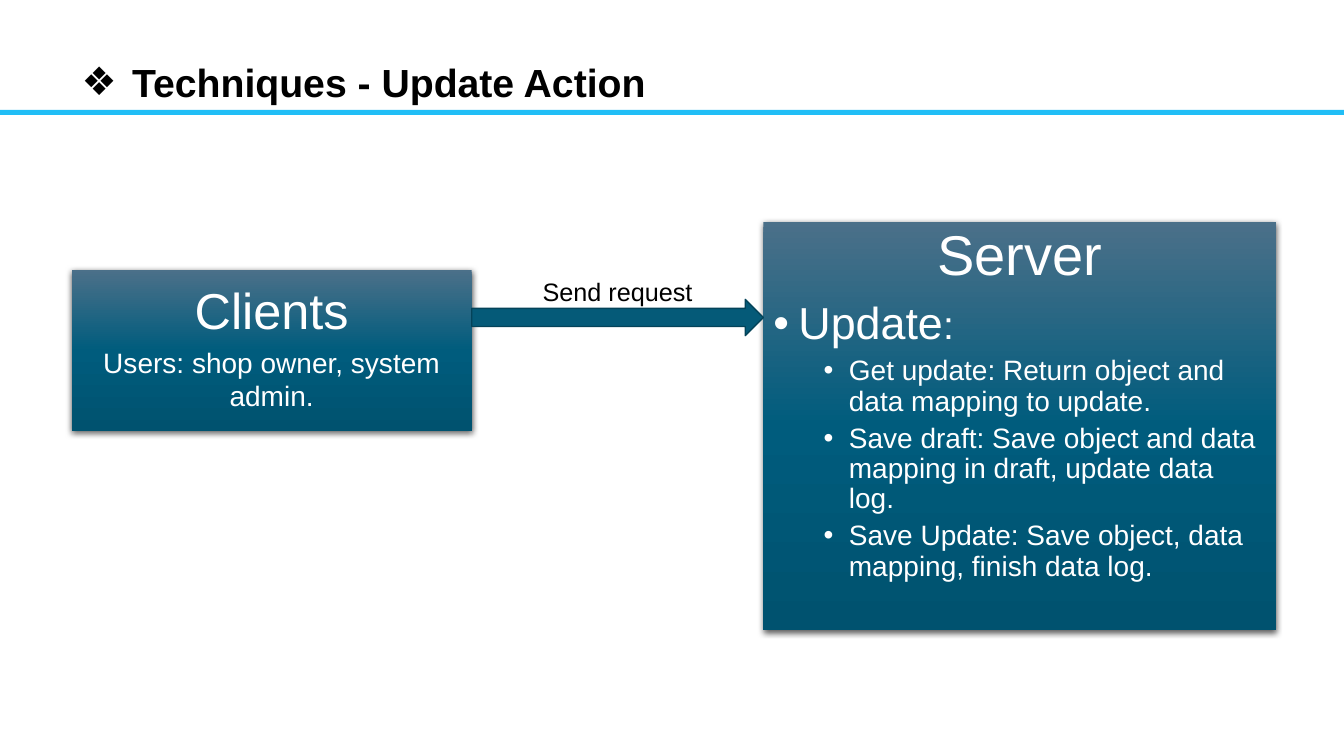
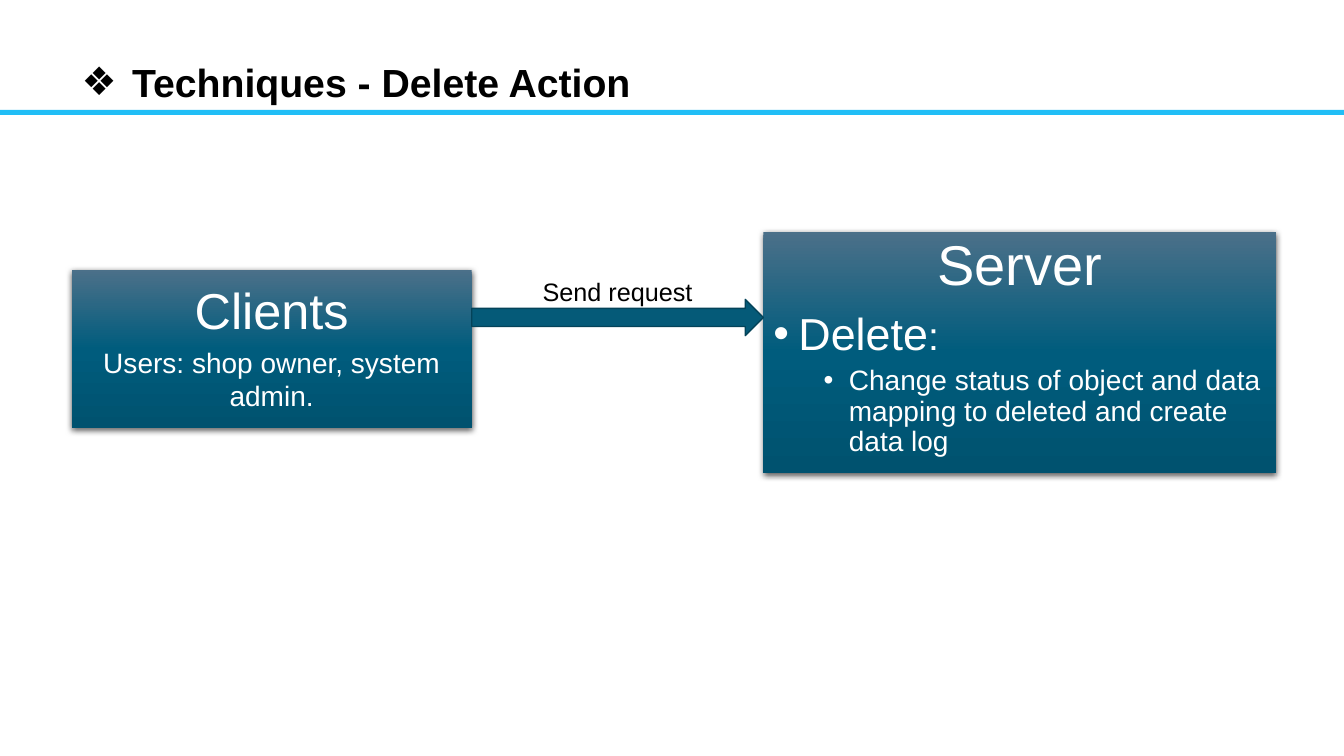
"""Builds two slides on how clients send update and delete requests to a server."""
from pptx import Presentation
from pptx.dml.color import RGBColor
from pptx.enum.shapes import MSO_SHAPE
from pptx.enum.text import MSO_ANCHOR, MSO_AUTO_SIZE, PP_ALIGN
from pptx.oxml import parse_xml
from pptx.oxml.ns import nsdecls
from pptx.util import Inches, Pt
from lxml.etree import SubElement
from pptx.oxml.ns import qn

BLACK = RGBColor(0x00, 0x00, 0x00)
WHITE = RGBColor(0xFF, 0xFF, 0xFF)
SKY = RGBColor(0x21, 0xBE, 0xF6)
TEAL = RGBColor(0x05, 0x5A, 0x78)
EDGE = RGBColor(0x04, 0x43, 0x59)
SHADES = (
    (0, RGBColor(0x4B, 0x70, 0x89)),
    (50, RGBColor(0x00, 0x5C, 0x7D)),
    (100, RGBColor(0x00, 0x52, 0x6F)),
)
FONT = "Arial"

LEFT, MID, RIGHT, END = 5.33, 35.1, 56.8, 94.97
LINKED = (MID, 39.6, RIGHT - MID, 4.8)
LABEL = (MID, 35.87, RIGHT - MID, 5.33)

SLIDES = (
    ("Update", 21.33, (29.33, 54), (
        "Get update: Return object and data mapping to update.",
        "Save draft: Save object and data mapping in draft, update data log.",
        "Save Update: Save object, data mapping, finish data log.",
    )),
    ("Delete", 20.93, (30.67, 31.87), (
        "Change status of object and data mapping to deleted and create data log",
    )),
)

deck = Presentation()
deck.slide_width, deck.slide_height = Inches(13.33), Inches(7.5)


def area(left, top, width, height):
    """Turn percentages of the slide into lengths."""
    wide, high = deck.slide_width / 100, deck.slide_height / 100
    return int(left * wide), int(top * high), int(width * wide), int(height * high)


def write(frame, text, size=20, color=WHITE, bold=False, align=PP_ALIGN.LEFT,
          before=0, lines=1.0, mark=None, left=0, hang=0, level=0, tail=None):
    """Add one paragraph to a text frame."""
    para = frame.add_paragraph() if frame.text else frame.paragraphs[0]
    para.alignment, para.level = align, level
    para.space_before, para.line_spacing = Pt(before), lines
    if mark:
        props = para._p.get_or_add_pPr()
        props.set("marL", str(Inches(left)))
        props.set("indent", str(-Inches(hang)))
        SubElement(props, qn("a:buFont")).set("typeface", FONT)
        SubElement(props, qn("a:buChar")).set("char", mark)
    for part, points in ((text, size), tail or ("", size)):
        if part:
            run = para.add_run()
            run.text = part
            run.font.name, run.font.size = FONT, Pt(points)
            run.font.bold, run.font.color.rgb = bold, color


for action, depth, (top, height), steps in SLIDES:
    slide = deck.slides.add_slide(deck.slide_layouts[5])
    shapes = slide.shapes

    band = shapes.add_shape(MSO_SHAPE.RECTANGLE, *area(0, 14.53, 100, 0.67))
    band.shadow.inherit = False
    band.fill.solid()
    band.fill.fore_color.rgb = SKY
    band.line.fill.background()

    title = shapes.title
    title.left, title.top, title.width, title.height = area(LEFT, 7.07, 61.8, 7.6)
    frame = title.text_frame
    frame.word_wrap, frame.auto_size = True, MSO_AUTO_SIZE.NONE
    frame.vertical_anchor = MSO_ANCHOR.TOP
    write(frame, f"Techniques - {action} Action", size=28, color=BLACK, bold=True,
          mark="❖", left=0.5, hang=0.5)

    boxes = []
    for place in ((LEFT, 35.73, MID - LEFT, depth), (RIGHT, top, END - RIGHT, height)):
        box = shapes.add_shape(MSO_SHAPE.RECTANGLE, *area(*place))
        stops = "".join(
            f'<a:gs pos="{spot * 1000}"><a:srgbClr val="{shade}"/></a:gs>'
            for spot, shade in SHADES)
        props = box._element.spPr
        props.append(parse_xml(
            f'<a:gradFill {nsdecls("a")} rotWithShape="1"><a:gsLst>{stops}</a:gsLst>'
            '<a:lin ang="5400000" scaled="0"/></a:gradFill>'))
        box.line.fill.background()
        props.append(parse_xml(
            f'<a:effectLst {nsdecls("a")}><a:outerShdw blurRad="{Pt(4.5)}" '
            f'dist="{Pt(1.5)}" dir="5400000" rotWithShape="0"><a:srgbClr val="{BLACK}">'
            '<a:alpha val="63000"/></a:srgbClr></a:outerShdw></a:effectLst>'))
        box.text_frame.word_wrap = True
        box.text_frame.vertical_anchor = MSO_ANCHOR.TOP
        boxes.append(box.text_frame)

    client, server = boxes
    client.margin_top = Inches(0.09)
    write(client, "Clients", size=36, align=PP_ALIGN.CENTER)
    write(client, "Users: shop owner, system admin.", align=PP_ALIGN.CENTER, before=4)

    write(server, "Server", size=40, align=PP_ALIGN.CENTER, lines=0.9)
    write(server, action, size=32, before=10, lines=0.9, mark="•",
          left=0.25, hang=0.25, tail=(":", 28))
    for step in steps:
        write(server, step, before=5, lines=0.9, mark="•",
              left=0.75, hang=0.25, level=1)

    arrow = shapes.add_shape(MSO_SHAPE.RIGHT_ARROW, *area(*LINKED))
    arrow.shadow.inherit = False
    arrow.fill.solid()
    arrow.fill.fore_color.rgb = TEAL
    arrow.line.color.rgb, arrow.line.width = EDGE, Pt(1)

    label = shapes.add_textbox(*area(*LABEL)).text_frame
    label.word_wrap = True
    write(label, "Send request", size=18, color=BLACK, align=PP_ALIGN.CENTER)

deck.save("out.pptx")
